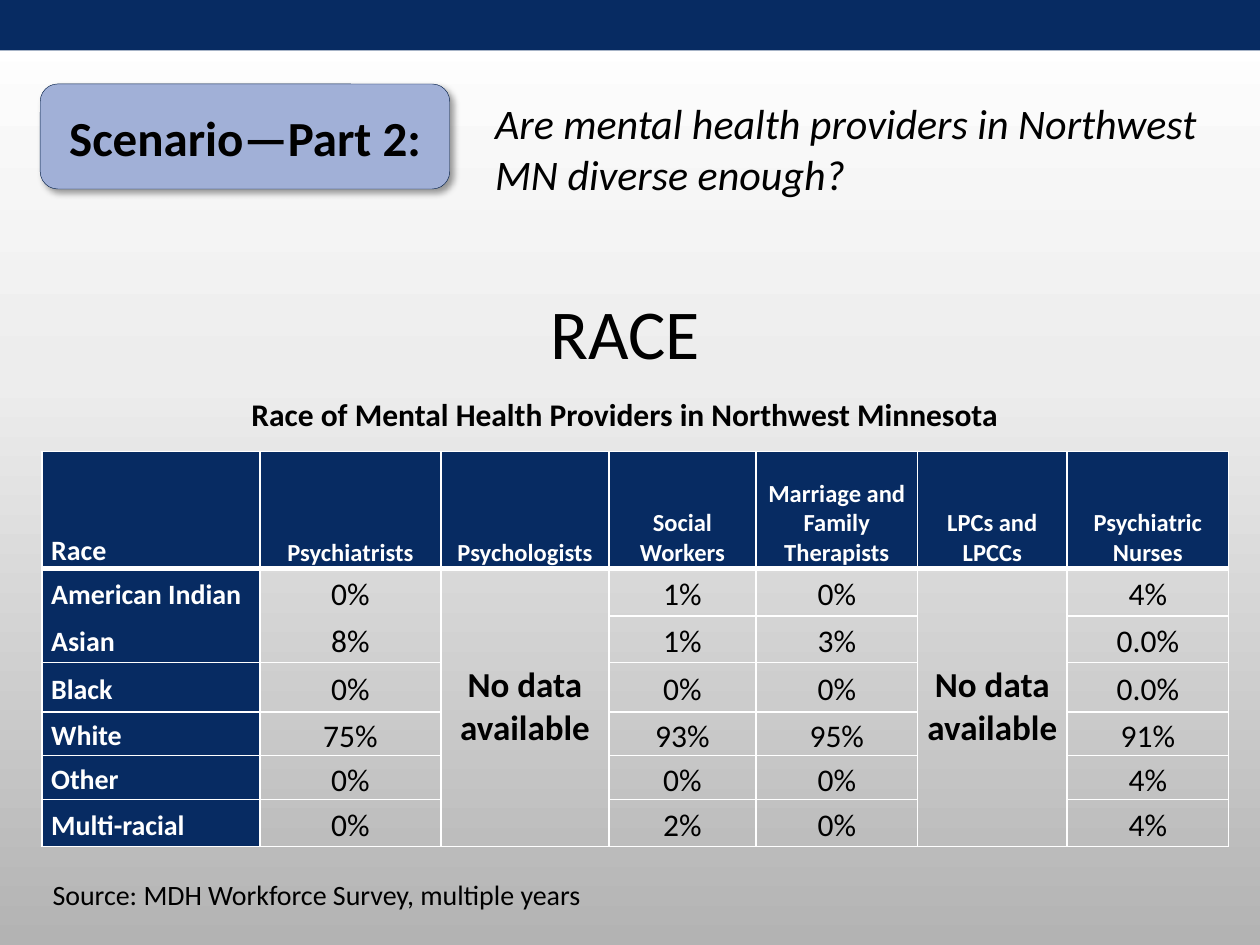
from copy import deepcopy

from lxml import etree
from pptx import Presentation
from pptx.dml.color import RGBColor
from pptx.enum.shapes import MSO_SHAPE
from pptx.enum.text import MSO_ANCHOR, MSO_AUTO_SIZE, PP_ALIGN
from pptx.oxml.ns import qn
from pptx.util import Pt

LEFT, CENTER = PP_ALIGN.LEFT, PP_ALIGN.CENTER
MIDDLE, BOTTOM = MSO_ANCHOR.MIDDLE, MSO_ANCHOR.BOTTOM
RECTANGLE, ROUNDED = MSO_SHAPE.RECTANGLE, MSO_SHAPE.ROUNDED_RECTANGLE
GROW = MSO_AUTO_SIZE.SHAPE_TO_FIT_TEXT

COLORS = {
    "white": "FFFFFF",
    "mist": "EDEDED",
    "gray": "B3B3B3",
    "navy": "072B62",
    "outline": "052049",
    "periwinkle": "A1B0D7",
    "black": "000000",
}


def rgb(name):
    return RGBColor.from_string(COLORS[name])


def write(frame, text, size, color="black", bold=False, italic=False, align=LEFT, spacing=None):
    frame.word_wrap = True
    para = frame.paragraphs[0]
    para.alignment = align
    para.line_spacing = spacing
    span = para.add_run()
    span.text = text
    span.font.name = "Calibri"
    span.font.size = Pt(size)
    span.font.bold = bold
    span.font.italic = italic
    span.font.color.rgb = rgb(color)


deck = Presentation()
deck.slide_width, deck.slide_height = Pt(720), Pt(540)
page = deck.slides.add_slide(deck.slide_layouts[6])

backdrop = page.background.fill
backdrop.gradient()
backdrop.gradient_angle = 270
stop_list = next(page._element.iter(qn("a:gsLst")))
stop_list.append(deepcopy(stop_list[-1]))
for stop, position, color in zip(backdrop.gradient_stops, (0, 0.4, 1), ("white", "mist", "gray")):
    stop.position = position
    stop.color.rgb = rgb(color)

for top, height, color in ((17.28, 18, "white"), (0, 28.8, "navy")):
    band = page.shapes.add_shape(RECTANGLE, 0, Pt(top), deck.slide_width, Pt(height))
    band.shadow.inherit = False
    band.fill.solid()
    band.fill.fore_color.rgb = rgb(color)
    band.line.fill.background()

badge = page.shapes.add_shape(ROUNDED, Pt(23), Pt(48), Pt(234), Pt(60))
badge.fill.solid()
badge.fill.fore_color.rgb = rgb("periwinkle")
badge.line.color.rgb = rgb("outline")
badge.line.width = Pt(0.25)
badge.shadow.inherit = False
effects = badge._element.spPr.find(qn("a:effectLst"))
shadow = etree.SubElement(effects, qn("a:outerShdw"), blurRad=str(Pt(4)), dist=str(Pt(3)),
                          dir="2700000", algn="tl", rotWithShape="0")
tint = etree.SubElement(shadow, qn("a:srgbClr"), val=COLORS["black"])
etree.SubElement(tint, qn("a:alpha"), val="40000")
badge.text_frame.vertical_anchor = MIDDLE
write(badge.text_frame, "Scenario—Part 2:", 28, bold=True, align=CENTER)

text_boxes = [
    ((275.8, 52.3, 426.2, 65.5), "Are mental health providers in Northwest MN diverse enough?",
     24, False, True, LEFT),
    ((186.2, 162, 342, 55.4), "RACE", 40, False, False, CENTER),
    ((30.2, 222.2, 653.8, 30.2), "Race of Mental Health Providers in Northwest Minnesota",
     18, True, False, CENTER),
    ((23, 498.2, 414.7, 26.6), "Source: MDH Workforce Survey, multiple years",
     16, False, False, LEFT),
]
for place, text, size, bold, italic, align in text_boxes:
    box = page.shapes.add_textbox(*map(Pt, place))
    write(box.text_frame, text, size, bold=bold, italic=italic, align=align)
    box.text_frame.auto_size = GROW

NO_DATA = "No data available"
rows = [
    ["Race", "Psychiatrists", "Psychologists", "Social Workers",
     "Marriage and Family Therapists", "LPCs and LPCCs", "Psychiatric Nurses"],
    ["American Indian", "0%", NO_DATA, "1%", "0%", NO_DATA, "4%"],
    ["Asian", "8%", "", "", "", "", ""],
    ["", "", "", "1%", "3%", "", "0.0%"],
    ["Black", "0%", "", "0%", "0%", "", "0.0%"],
    ["White", "75%", "", "93%", "95%", "", "91%"],
    ["Other", "0%", "", "0%", "0%", "", "4%"],
    ["Multi-racial", "0%", "", "2%", "0%", "", "4%"],
]
column_widths = [124.5, 103.5, 96, 84, 92.4, 85.4, 92.4]
row_heights = [66.7, 27.2, 0, 26.5, 28.4, 25, 25, 27]
merges = {0: (2, 3), 1: (2, 3), 2: (1, 7), 3: (1, 2), 4: (1, 2), 5: (1, 7), 6: (1, 2)}

table = page.shapes.add_table(len(rows), len(column_widths), Pt(24), Pt(258),
                              Pt(sum(column_widths)), Pt(sum(row_heights))).table
table.horz_banding = False
for column, width in zip(table.columns, column_widths):
    column.width = Pt(width)
for row, height in zip(table.rows, row_heights):
    row.height = Pt(height)
for c, (first, last) in merges.items():
    table.cell(first, c).merge(table.cell(last, c))

for r, row in enumerate(rows):
    for c, text in enumerate(row):
        cell = table.cell(r, c)
        header, label = r == 0, c == 0
        missing = text == NO_DATA
        cell.margin_left = cell.margin_right = Pt(1 if missing else 5.3)
        cell.margin_top = cell.margin_bottom = 0
        cell.vertical_anchor = BOTTOM if header else MIDDLE
        if header or label:
            cell.fill.solid()
            cell.fill.fore_color.rgb = rgb("navy")
        else:
            cell.fill.background()
        if text:
            size = 20 if missing else 16 if label else 14 if header else 18
            write(cell.text_frame, text, size,
                  color="white" if header or label else "black",
                  bold=header or label or missing,
                  align=LEFT if label else CENTER,
                  spacing=None if missing or (header and not label) else 1.15)

        properties = cell._tc.get_or_add_tcPr()
        for index, side in enumerate("LRTB"):
            thick = (r, side) in ((0, "B"), (1, "T"))
            hidden = c < 2 and (r, side) in ((1, "B"), (2, "T"))
            border = etree.Element(qn("a:ln" + side), w=str(Pt(3 if thick else 1)))
            if hidden:
                etree.SubElement(border, qn("a:noFill"))
            else:
                paint = etree.SubElement(border, qn("a:solidFill"))
                etree.SubElement(paint, qn("a:srgbClr"), val=COLORS["white"])
            properties.insert(index, border)

deck.save("out.pptx")
